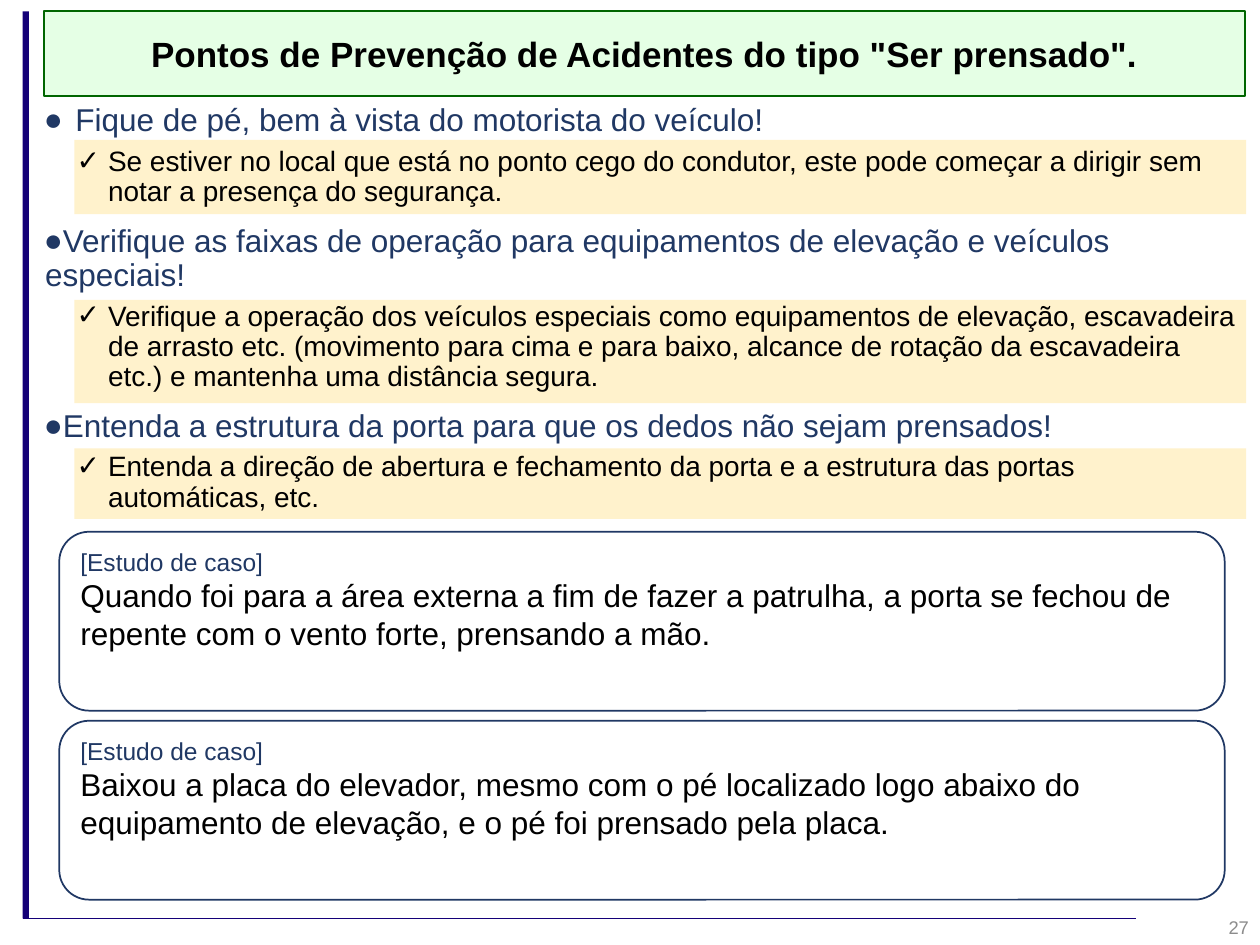
from dataclasses import dataclass

from lxml import etree
from pptx import Presentation
from pptx import util as u
from pptx.dml.color import RGBColor
from pptx.enum import shapes, text
from pptx.oxml import ns


@dataclass(frozen=True)
class Theme:
    font: str = "Arial"
    navy: str = "203864"
    rail: str = "140078"
    cream: str = "FFF2CC"
    mint: str = "CCFFCC"
    green: str = "006600"
    white: str = "FFFFFF"
    black: str = "000000"
    grey: str = "8C8C8C"
    title: float = 20
    point: float = 18
    detail: float = 16
    label: float = 14
    number: float = 10.5


@dataclass(frozen=True)
class Box:
    left: float
    top: float
    width: float
    height: float

    def emu(self) -> tuple:
        return tuple(u.Inches(v) for v in (self.left, self.top, self.width, self.height))


@dataclass(frozen=True)
class Advice:
    point: str
    detail: str
    margin: float
    band: Box


@dataclass(frozen=True)
class CaseStudy:
    story: str
    top: float


THEME = Theme()
ADVICE = [
    Advice("Fique de pé, bem à vista do motorista do veículo!",
           "Se estiver no local que está no ponto cego do condutor, este pode começar "
           "a dirigir sem notar a presença do segurança.",
           0.25, Box(0.59, 1.11, 9.3, 0.59)),
    Advice("Verifique as faixas de operação para equipamentos de elevação e veículos especiais!",
           "Verifique a operação dos veículos especiais como equipamentos de elevação, "
           "escavadeira de arrasto etc. (movimento para cima e para baixo, alcance de "
           "rotação da escavadeira etc.) e mantenha uma distância segura.",
           0.01, Box(0.59, 2.38, 9.3, 0.82)),
    Advice("Entenda a estrutura da porta para que os dedos não sejam prensados!",
           "Entenda a direção de abertura e fechamento da porta e a estrutura das "
           "portas automáticas, etc.",
           0.01, Box(0.59, 3.56, 9.3, 0.56)),
]
CASES = [
    CaseStudy("Quando foi para a área externa a fim de fazer a patrulha, a porta se "
              "fechou de repente com o vento forte, prensando a mão.", 4.22),
    CaseStudy("Baixou a placa do elevador, mesmo com o pé localizado logo abaixo do "
              "equipamento de elevação, e o pé foi prensado pela placa.", 5.72),
]


def add_panel(slide, box: Box, fill: str, line: str = "",
              outline=shapes.MSO_SHAPE.RECTANGLE):
    """Draw a filled shape with an optional one-point border."""
    panel = slide.shapes.add_shape(outline, *box.emu())
    panel.shadow.inherit = False
    panel.fill.solid()
    panel.fill.fore_color.rgb = RGBColor.from_string(fill)
    if line:
        panel.line.color.rgb = RGBColor.from_string(line)
        panel.line.width = u.Pt(1)
    else:
        panel.line.fill.background()
    return panel


def set_frame(shape, anchor=text.MSO_ANCHOR.TOP):
    """Prepare a wrapping text frame and return it."""
    frame = shape.text_frame
    frame.word_wrap = True
    frame.vertical_anchor = anchor
    return frame


def write(paragraph, words: str, size: float, color: str, bold: bool = False,
          align=text.PP_ALIGN.LEFT) -> None:
    """Add one styled run to an aligned paragraph."""
    paragraph.alignment = align
    run = paragraph.add_run()
    run.text = words
    run.font.name = THEME.font
    run.font.size = u.Pt(size)
    run.font.bold = bold
    run.font.color.rgb = RGBColor.from_string(color)


def set_bullet(paragraph, mark: str, margin: float, before: float) -> None:
    """Give a paragraph its bullet, hanging indent and spacing."""
    paragraph.line_spacing = 0.9
    paragraph.space_before = u.Pt(before)
    properties = paragraph._p.get_or_add_pPr()
    properties.set("marL", str(u.Inches(margin)))
    properties.set("indent", str(u.Inches(-0.25)))
    etree.SubElement(properties, ns.qn("a:buFont"), typeface=THEME.font)
    etree.SubElement(properties, ns.qn("a:buChar"), char=mark)


def add_rails(slide) -> None:
    """Draw the vertical bar and the footer rule."""
    add_panel(slide, Box(0.18, 0.09, 0.05, 7.2), THEME.rail)
    rule = slide.shapes.add_connector(
        shapes.MSO_CONNECTOR.STRAIGHT,
        u.Inches(0.18), u.Inches(7.29), u.Inches(9.02), u.Inches(7.29))
    rule.line.color.rgb = RGBColor.from_string(THEME.rail)
    rule.line.width = u.Pt(1)
    etree.SubElement(rule._element.spPr, ns.qn("a:effectLst"))


def add_title(slide) -> None:
    """Draw the half-transparent title banner."""
    banner = add_panel(slide, Box(0.35, 0.09, 9.53, 0.67), THEME.mint, THEME.green)
    tint = banner._element.spPr.find(ns.qn("a:solidFill"))[0]
    etree.SubElement(tint, ns.qn("a:alpha"), val="50000")
    frame = set_frame(banner, text.MSO_ANCHOR.MIDDLE)
    write(frame.paragraphs[0], 'Pontos de Prevenção de Acidentes do tipo "Ser prensado".',
          THEME.title, THEME.black, True, text.PP_ALIGN.CENTER)


def add_advice(slide) -> None:
    """Draw the highlight bands and the bulleted advice over them."""
    for advice in ADVICE:
        add_panel(slide, advice.band, THEME.cream)
    frame = set_frame(slide.shapes.add_textbox(*Box(0.25, 0.78, 9.68, 6.67).emu()))
    for index, advice in enumerate(ADVICE):
        point = frame.add_paragraph() if index else frame.paragraphs[0]
        write(point, advice.point, THEME.point, THEME.navy)
        set_bullet(point, "●", advice.margin, 10)
        detail = frame.add_paragraph()
        detail.level = 1
        write(detail, advice.detail, THEME.detail, THEME.black)
        set_bullet(detail, "✓", 0.51, 5)


def add_case(slide, case: CaseStudy) -> None:
    """Draw one rounded case-study card."""
    card = add_panel(slide, Box(0.47, case.top, 9.25, 1.42), THEME.white, THEME.navy,
                     shapes.MSO_SHAPE.ROUNDED_RECTANGLE)
    frame = set_frame(card)
    write(frame.paragraphs[0], "[Estudo de caso]", THEME.label, THEME.navy)
    write(frame.add_paragraph(), case.story, THEME.point, THEME.black)


def add_number(slide) -> None:
    """Write the slide number in the lower right corner."""
    corner = slide.shapes.add_textbox(*Box(7.76, 7.16, 2.25, 0.4).emu())
    frame = set_frame(corner, text.MSO_ANCHOR.MIDDLE)
    write(frame.paragraphs[0], "27", THEME.number, THEME.grey, align=text.PP_ALIGN.RIGHT)


def main() -> None:
    """Build the slide and save it."""
    deck = Presentation()
    deck.slide_width, deck.slide_height = u.Inches(10), u.Inches(7.5)
    slide = deck.slides.add_slide(deck.slide_layouts[6])
    add_rails(slide)
    add_title(slide)
    add_advice(slide)
    for case in CASES:
        add_case(slide, case)
    add_number(slide)
    deck.save("out.pptx")


if __name__ == "__main__":
    main()
